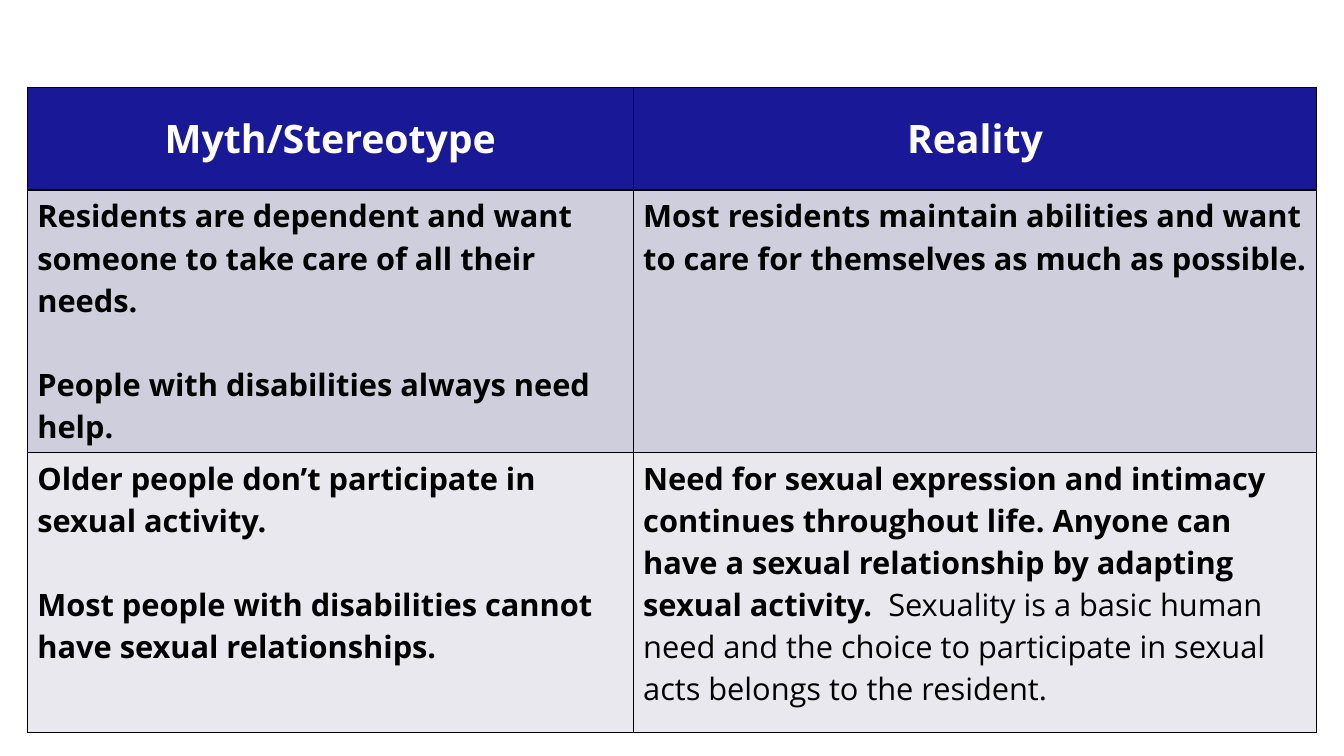
import pptx
import pptx.dml.color
import pptx.enum.text
import pptx.oxml
import pptx.oxml.ns
import pptx.util
from dataclasses import dataclass


@dataclass(frozen=True)
class Theme:
    font: str = "Open Sans"
    head: str = "191998"
    bands: tuple = ("CFCEDD", "E9E8EF")
    light: str = "FFFFFF"
    dark: str = "000000"
    title: int = 28
    body: int = 22
    gap: int = 30
    line: int = 1


THEME = Theme()
SCALE = 9525
COLS = (577, 651)
ROWS = (98, 228, 267)
HEADS = ("Myth/Stereotype", "Reality")
FACTS = (
    (
        (
            "Residents are dependent and want someone to take care of all their needs.",
            "People with disabilities always need help.",
        ),
        (
            "Most residents maintain abilities and want to care for themselves as much as possible.",
        ),
    ),
    (
        (
            "Older people don’t participate in sexual activity.",
            "Most people with disabilities cannot have sexual relationships.",
        ),
        (
            "Need for sexual expression and intimacy continues throughout life. "
            "Anyone can have a sexual relationship by adapting sexual activity.  ",
        ),
    ),
)
CHOICE = (
    "Sexuality is a basic human need and the choice to participate "
    "in sexual acts belongs to the resident."
)


def px(count):
    return pptx.util.Emu(count * SCALE)


def tint(code):
    return pptx.dml.color.RGBColor.from_string(code)


def style(run, size, color, bold=True):
    run.font.name = THEME.font
    run.font.size = pptx.util.Pt(size)
    run.font.bold = bold
    run.font.color.rgb = tint(color)


def frame(cell):
    props = cell._tc.get_or_add_tcPr()
    space = pptx.oxml.ns.nsdecls("a")
    width = pptx.util.Pt(THEME.line)
    for index, side in enumerate(("lnL", "lnR", "lnT", "lnB")):
        edge = pptx.oxml.parse_xml(
            f'<a:{side} {space} w="{width}"><a:solidFill>'
            f'<a:srgbClr val="{THEME.dark}"/></a:solidFill></a:{side}>'
        )
        props.insert(index, edge)


def paint(cell, fill):
    cell.fill.solid()
    cell.fill.fore_color.rgb = tint(fill)
    frame(cell)


def add_head(cell, text):
    paint(cell, THEME.head)
    cell.vertical_anchor = pptx.enum.text.MSO_ANCHOR.MIDDLE
    cell.text_frame.text = text
    para = cell.text_frame.paragraphs[0]
    para.alignment = pptx.enum.text.PP_ALIGN.CENTER
    style(para.runs[0], THEME.title, THEME.light)


def add_body(cell, texts, fill):
    paint(cell, fill)
    cell.text_frame.text = "\n".join(texts)
    for index, para in enumerate(cell.text_frame.paragraphs):
        if index:
            para.space_before = pptx.util.Pt(THEME.gap)
        style(para.runs[0], THEME.body, THEME.dark)


def add_grid(slide):
    grid = slide.shapes.add_table(
        len(ROWS), len(COLS), px(26), px(83), px(sum(COLS)), px(sum(ROWS))
    ).table
    grid.horz_banding = False
    for col, width in zip(grid.columns, COLS):
        col.width = px(width)
    for row, height in zip(grid.rows, ROWS):
        row.height = px(height)
    return grid


def main():
    deck = pptx.Presentation()
    deck.slide_width = px(1280)
    deck.slide_height = px(720)
    slide = deck.slides.add_slide(deck.slide_layouts[6])
    grid = add_grid(slide)
    for col, text in enumerate(HEADS):
        add_head(grid.cell(0, col), text)
    for row, (facts, fill) in enumerate(zip(FACTS, THEME.bands), 1):
        for col, texts in enumerate(facts):
            add_body(grid.cell(row, col), texts, fill)
    run = grid.cell(2, 1).text_frame.paragraphs[0].add_run()
    run.text = CHOICE
    style(run, THEME.body, THEME.dark, False)
    deck.save("out.pptx")


if __name__ == "__main__":
    main()
